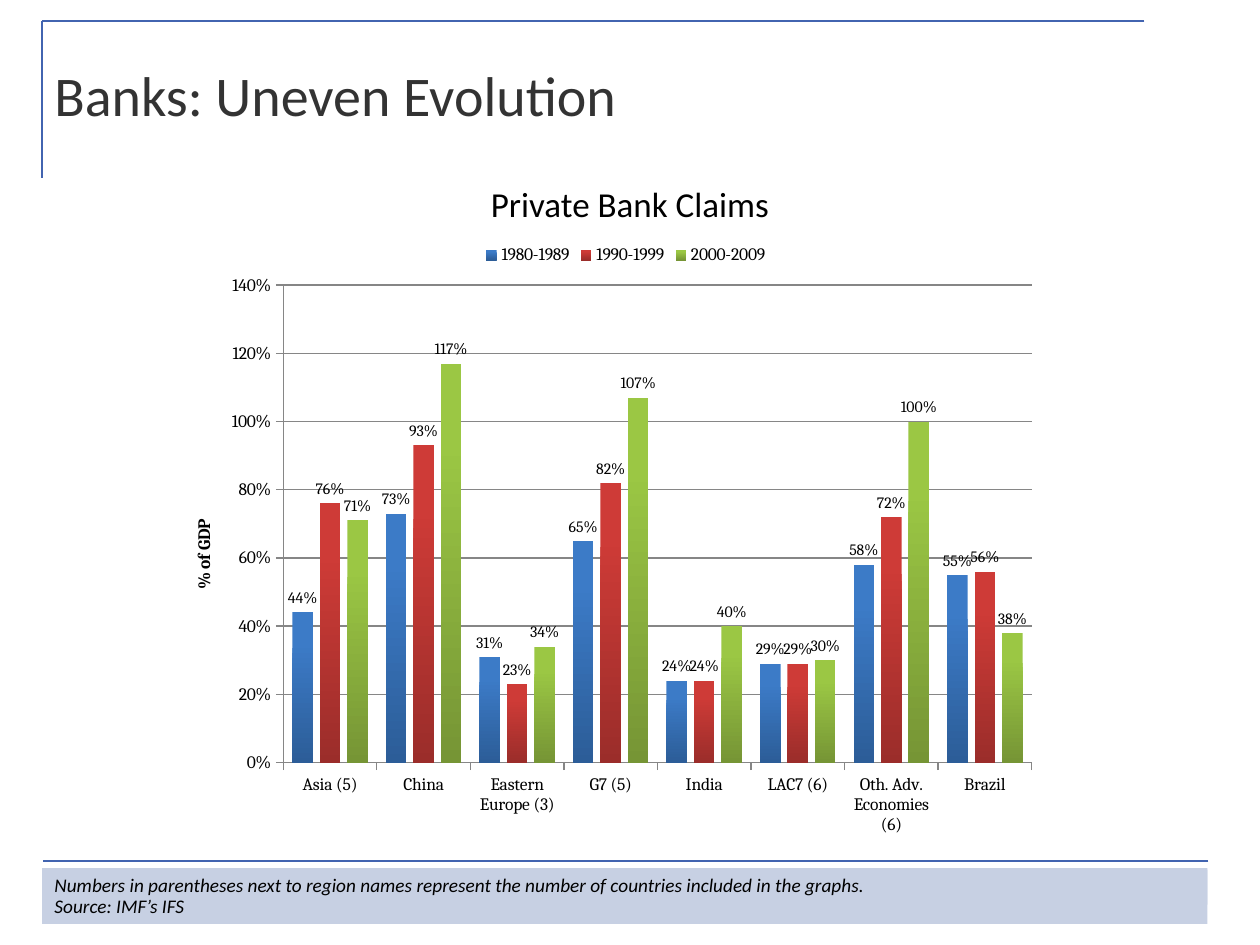
from dataclasses import dataclass

from lxml import etree
from pptx import Presentation
from pptx.chart import data as chart_data
from pptx.dml import color
from pptx.enum import chart as charts, shapes, text
from pptx.oxml import ns, parse_xml
from pptx.util import Pt

RULE, BAND, AXIS = "4264B0", "C7D0E3", "868686"


@dataclass
class Box:
    left: float
    top: float
    width: float
    height: float

    def lengths(self) -> list:
        return [Pt(n) for n in (self.left, self.top, self.width, self.height)]


@dataclass
class Rule:
    x1: float
    y1: float
    x2: float
    y2: float


@dataclass
class Period:
    name: str
    values: list[float]
    top: str
    bottom: str


RULES = [Rule(654, 12, 24, 12), Rule(24, 12, 24, 102), Rule(690.5, 492, 24.5, 492)]
REGIONS = ["Asia (5)", "China", "Eastern Europe (3)", "G7 (5)", "India",
           "LAC7 (6)", "Oth. Adv. Economies (6)", "Brazil"]
PERIODS = [
    Period("1980-1989", [0.44, 0.73, 0.31, 0.65, 0.24, 0.29, 0.58, 0.55], "3C7BC7", "2C5D98"),
    Period("1990-1999", [0.76, 0.93, 0.23, 0.82, 0.24, 0.29, 0.72, 0.56], "CE3B37", "9B2D2A"),
    Period("2000-2009", [0.71, 1.17, 0.34, 1.07, 0.4, 0.3, 1, 0.38], "9BC744", "769535"),
]
PLOT_AREA = {"x": 0.108, "y": 0.086, "w": 0.857, "h": 0.758}


def paint(target, value: str) -> None:
    target.rgb = color.RGBColor.from_string(value)


def style_font(font, size: float, value: str = "000000", name: str = "Calibri",
               bold: bool = False, italic: bool = False) -> None:
    font.size, font.name, font.bold, font.italic = Pt(size), name, bold, italic
    paint(font.color, value)


def draw_rule(page, rule: Rule) -> None:
    line = page.shapes.add_connector(
        shapes.MSO_CONNECTOR.STRAIGHT, Pt(rule.x1), Pt(rule.y1), Pt(rule.x2), Pt(rule.y2))
    line.line.width = Pt(1.5)
    paint(line.line.color, RULE)
    etree.SubElement(line._element.spPr, ns.qn("a:effectLst"))


def draw_band(page, box: Box):
    band = page.shapes.add_shape(shapes.MSO_SHAPE.RECTANGLE, *box.lengths())
    band.shadow.inherit = False
    band.fill.solid()
    paint(band.fill.fore_color, BAND)
    band.line.fill.background()
    return band


def write(shape, lines: list[str], size: float, align, anchor=text.MSO_ANCHOR.TOP,
          value: str = "000000", italic: bool = False, spacing: float = 1) -> None:
    frame = shape.text_frame
    frame.word_wrap = True
    frame.vertical_anchor = anchor
    for index, line in enumerate(lines):
        para = frame.add_paragraph() if index else frame.paragraphs[0]
        para.alignment = align
        para.line_spacing = spacing
        span = para.add_run()
        span.text = line
        style_font(span.font, size, value, italic=italic)


def style_axis(axis) -> None:
    axis.major_tick_mark = charts.XL_TICK_MARK.OUTSIDE
    axis.minor_tick_mark = charts.XL_TICK_MARK.NONE
    paint(axis.format.line.color, AXIS)
    style_font(axis.tick_labels.font, 10, name="Cambria")


def style_series(series, period: Period) -> None:
    fill = series.format.fill
    fill.gradient()
    fill.gradient_angle = 270
    for stop, value, position in zip(fill.gradient_stops, (period.top, period.bottom), (0.2, 1)):
        paint(stop.color, value)
        stop.position = position
    labels = series.data_labels
    labels.show_value = True
    labels.number_format, labels.number_format_is_linked = "0%", False
    labels.position = charts.XL_LABEL_POSITION.OUTSIDE_END
    style_font(labels.font, 9, name="Cambria")


def place_plot(chart) -> None:
    area = chart._chartSpace.chart.plotArea
    for old in area.findall(ns.qn("c:layout")):
        area.remove(old)
    sizes = "".join(f'<c:{key} val="{size}"/>' for key, size in PLOT_AREA.items())
    area.insert(0, parse_xml(
        f'<c:layout {ns.nsdecls("c")}><c:manualLayout><c:layoutTarget val="inner"/>'
        f'<c:xMode val="edge"/><c:yMode val="edge"/>{sizes}</c:manualLayout></c:layout>'))


def draw_chart(page, box: Box) -> None:
    data = chart_data.CategoryChartData(number_format="0%")
    data.categories = REGIONS
    for period in PERIODS:
        data.add_series(period.name, period.values)
    chart = page.shapes.add_chart(
        charts.XL_CHART_TYPE.COLUMN_CLUSTERED, *box.lengths(), data).chart
    style_font(chart.font, 10, name="Cambria")
    chart.has_title = False
    chart.has_legend = True
    chart.legend.position = charts.XL_LEGEND_POSITION.TOP
    chart.legend.include_in_layout = False
    style_font(chart.legend.font, 10, name="Cambria")

    plot = chart.plots[0]
    plot.gap_width, plot.overlap, plot.vary_by_categories = 88, -34, False
    for series, period in zip(plot.series, PERIODS):
        style_series(series, period)

    style_axis(chart.category_axis)
    axis = chart.value_axis
    style_axis(axis)
    axis.minimum_scale, axis.maximum_scale, axis.major_unit = 0, 1.4, 0.2
    axis.tick_labels.number_format = "0%"
    axis.tick_labels.number_format_is_linked = False
    axis.has_major_gridlines = True
    paint(axis.major_gridlines.format.line.color, AXIS)
    span = axis.axis_title.text_frame.paragraphs[0].add_run()
    span.text = "% of GDP"
    style_font(span.font, 10, name="Cambria", bold=True)
    place_plot(chart)


def main() -> None:
    deck = Presentation()
    deck.slide_width, deck.slide_height = Pt(720), Pt(540)
    page = deck.slides.add_slide(deck.slide_layouts[6])
    for rule in RULES:
        draw_rule(page, rule)
    draw_band(page, Box(24, 496, 666, 21))

    heading = page.shapes.add_textbox(*Box(180, 101, 360, 32).lengths())
    write(heading, ["Private Bank Claims"], 20, text.PP_ALIGN.CENTER)
    title = page.shapes.add_textbox(*Box(24, 12, 684, 84).lengths())
    write(title, ["Banks: Uneven Evolution"], 32, text.PP_ALIGN.LEFT,
          text.MSO_ANCHOR.MIDDLE, "333333")
    footnote = draw_band(page, Box(24, 497, 666, 31))
    write(footnote, ["Numbers in parentheses next to region names represent the number of "
                     "countries included in the graphs.", "Source: IMF’s IFS"],
          11, text.PP_ALIGN.JUSTIFY, italic=True, spacing=0.9)
    draw_chart(page, Box(108, 132, 499, 360))
    deck.save("out.pptx")


if __name__ == "__main__":
    main()
